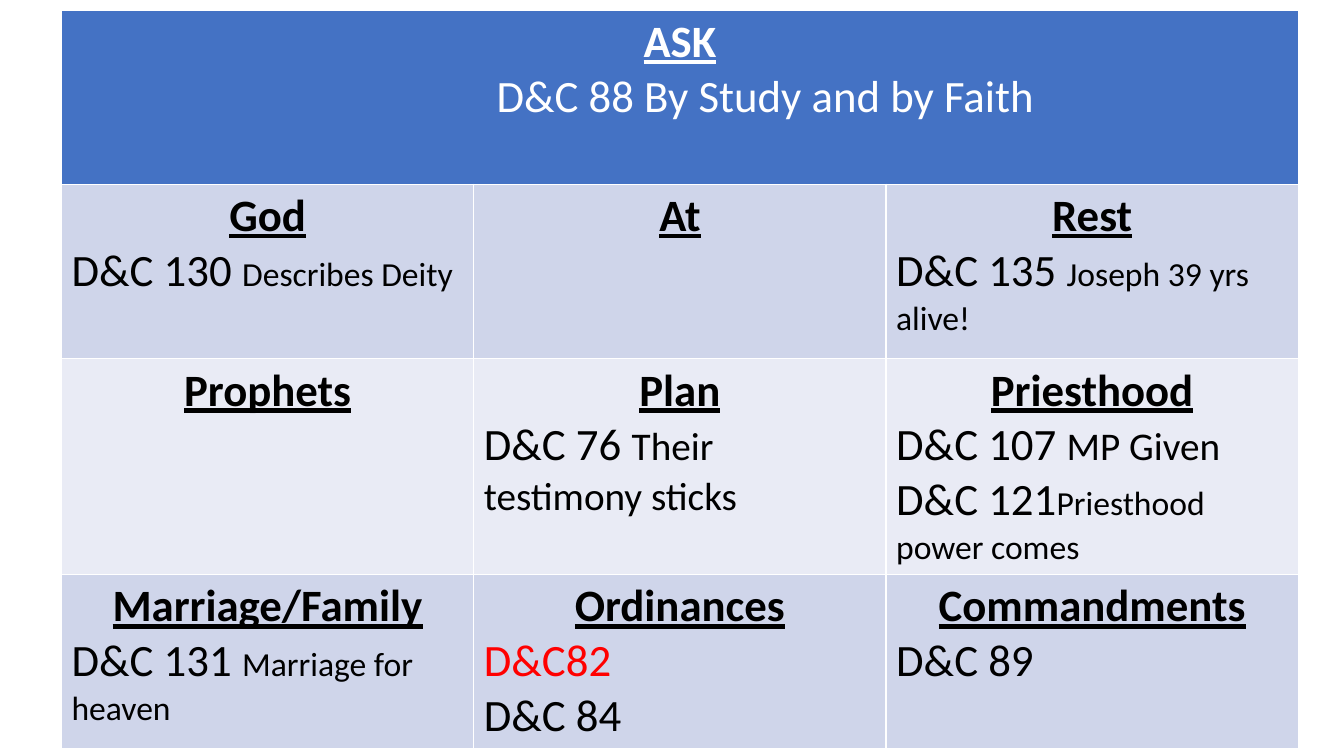
from dataclasses import dataclass

from pptx import Presentation
from pptx.dml.color import RGBColor
from pptx.enum.text import PP_ALIGN as Align
from pptx.util import Cm, Pt

WHITE = RGBColor(0xFF, 0xFF, 0xFF)
BLACK = RGBColor(0x00, 0x00, 0x00)
RED = RGBColor(0xFF, 0x00, 0x00)
BLUE = RGBColor(0x44, 0x72, 0xC4)
BANDS = (RGBColor(0xCF, 0xD5, 0xEA), RGBColor(0xE9, 0xEB, 0xF5))

COLS = 3
COL_WIDTH = Cm(10.39)
ROW_HEIGHTS = (Cm(4.39), Cm(4.39), Cm(5.44), Cm(4.39))
STUDY_INDENT = Cm(10.71)


@dataclass(frozen=True)
class Reference:
    section: str
    note: str = ""
    note_size: int = 24
    color: RGBColor = BLACK
    indent: int = 0


@dataclass(frozen=True)
class Topic:
    title: str
    references: tuple[Reference, ...] = ()
    color: RGBColor = BLACK


ASK = Topic(
    "ASK",
    (Reference("D&C 88 By Study and by Faith", color=WHITE, indent=STUDY_INDENT),),
    WHITE,
)
TOPICS = (
    (
        Topic("God", (Reference("D&C 130 ", "Describes Deity"),)),
        Topic("At"),
        Topic("Rest", (Reference("D&C 135 ", "Joseph 39 yrs alive!"),)),
    ),
    (
        Topic("Prophets"),
        Topic("Plan", (Reference("D&C 76 ", "Their testimony sticks", 28),)),
        Topic("Priesthood", (
            Reference("D&C 107 ", "MP Given", 28),
            Reference("D&C 121", "Priesthood power comes"),
        )),
    ),
    (
        Topic("Marriage/Family", (Reference("D&C 131 ", "Marriage for heaven"),)),
        Topic("Ordinances", (Reference("D&C82", color=RED), Reference("D&C 84"))),
        Topic("Commandments", (Reference("D&C 89"),)),
    ),
)


def add_text(p, text: str, *, size: int = 32, color: RGBColor = BLACK,
             heading: bool = False) -> None:
    r = p.add_run()
    r.text = text
    r.font.name = "Calibri"
    r.font.size = Pt(size)
    r.font.color.rgb = color
    r.font.bold = heading
    r.font.underline = heading


def fill_cell(cell, color: RGBColor) -> None:
    cell.fill.solid()
    cell.fill.fore_color.rgb = color


def write_topic(cell, topic: Topic) -> None:
    tf = cell.text_frame
    p = tf.paragraphs[0]
    p.alignment = Align.CENTER
    add_text(p, topic.title, color=topic.color, heading=True)
    for ref in topic.references:
        p = tf.add_paragraph()
        p.alignment = Align.LEFT
        if ref.indent:
            p._p.get_or_add_pPr().set("marL", str(ref.indent))
        add_text(p, ref.section, color=ref.color)
        if ref.note:
            add_text(p, ref.note, size=ref.note_size, color=ref.color)


def main() -> None:
    prs = Presentation()
    prs.slide_width, prs.slide_height = Cm(33.87), Cm(19.05)
    s = prs.slides.add_slide(prs.slide_layouts[6])
    table = s.shapes.add_table(
        len(ROW_HEIGHTS), COLS, Cm(1.55), Cm(0.25),
        COL_WIDTH * COLS, sum(ROW_HEIGHTS),
    ).table
    for col in table.columns:
        col.width = COL_WIDTH
    for row, height in zip(table.rows, ROW_HEIGHTS):
        row.height = height

    for cell in table.rows[0].cells:
        fill_cell(cell, BLUE)
    table.cell(0, 0).merge(table.cell(0, COLS - 1))
    write_topic(table.cell(0, 0), ASK)

    for i, topics in enumerate(TOPICS):
        for j, topic in enumerate(topics):
            cell = table.cell(i + 1, j)
            fill_cell(cell, BANDS[i % len(BANDS)])
            write_topic(cell, topic)

    prs.save("out.pptx")


if __name__ == "__main__":
    main()
